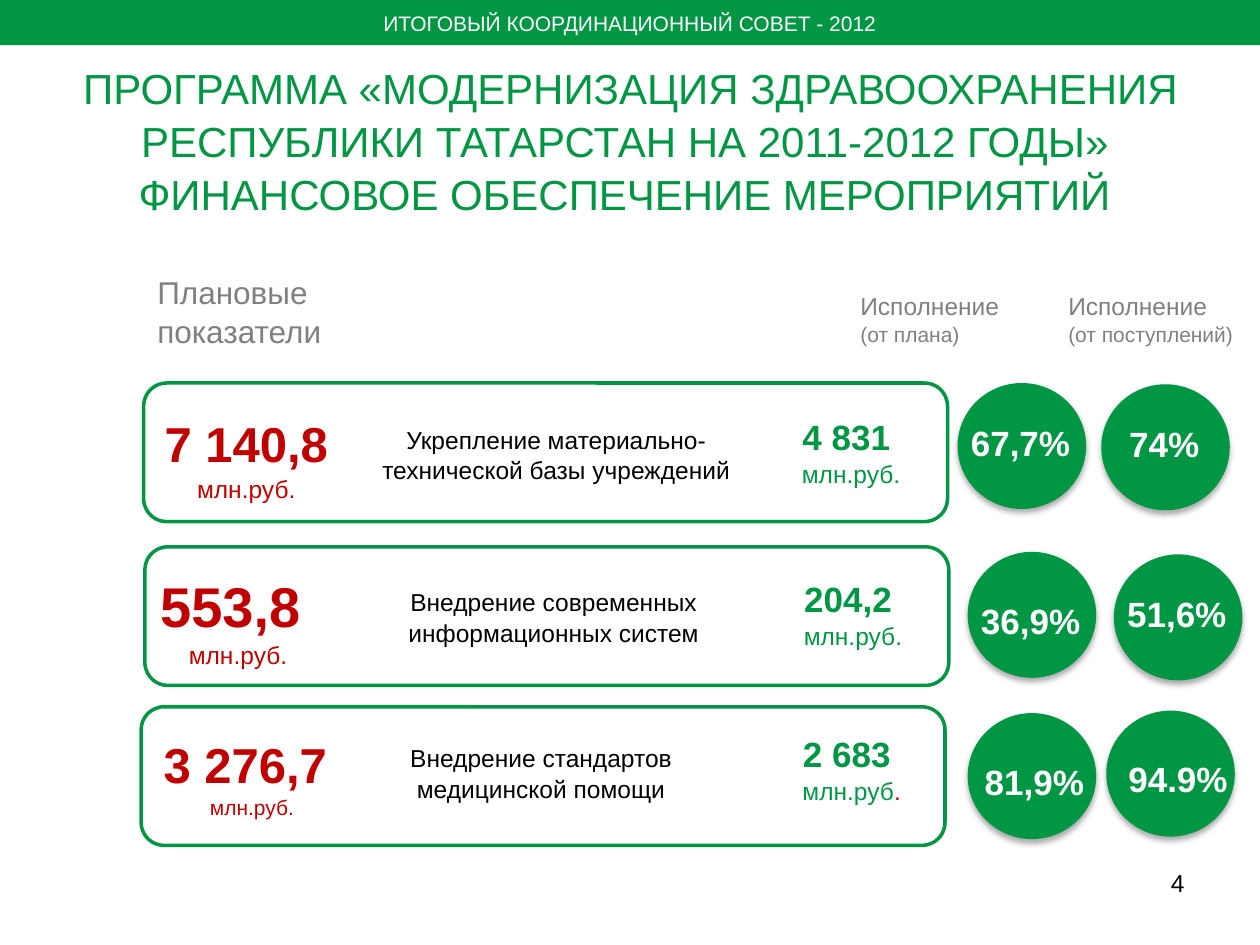
from dataclasses import dataclass

from lxml import etree
from pptx import Presentation
from pptx import util as u
from pptx.dml.color import RGBColor
from pptx.enum import shapes, text
from pptx.oxml.ns import qn

GREEN = RGBColor(0x00, 0x96, 0x44)
RED = RGBColor(0xC0, 0x00, 0x00)
GRAY = RGBColor(0x80, 0x80, 0x80)
BLACK = RGBColor(0x00, 0x00, 0x00)
WHITE = RGBColor(0xFF, 0xFF, 0xFF)

FONT = "Arial"
SLIDE_W, SLIDE_H = u.Inches(10), u.Inches(7.5)
COL, ROW = SLIDE_W / 100, SLIDE_H / 75
LINE_SPACING = 1.05
LEFT, CENTER, RIGHT = text.PP_ALIGN.LEFT, text.PP_ALIGN.CENTER, text.PP_ALIGN.RIGHT


@dataclass(frozen=True)
class Box:
    """Place on the grid of 100 columns and 75 rows."""
    col: float
    row: float
    cols: float
    rows: float

    def emu(self) -> tuple[int, int, int, int]:
        return (round(self.col * COL), round(self.row * ROW),
                round(self.cols * COL), round(self.rows * ROW))


@dataclass(frozen=True)
class Run:
    text: str
    size: float
    color: RGBColor
    bold: bool = False


@dataclass(frozen=True)
class Share:
    """A percentage in a circle; the label has its own place."""
    value: str
    circle: tuple[float, float]
    label: Box


@dataclass(frozen=True)
class Measure:
    frame: tuple[float, float]
    name: str
    name_at: tuple[float, float]
    plan: str
    plan_box: Box
    plan_sizes: tuple[float, float]
    spent: str
    spent_box: Box
    shares: tuple[Share, Share]
    dot_color: RGBColor = GREEN


MEASURES = (
    Measure((11.4, 30.4), "Укрепление материально-технической базы учреждений", (27.5, 33.1),
            "7 140,8 ", Box(11.7, 32.1, 15.7, 8.1), (28, 14),
            "4 831 ", Box(60.1, 32.3, 14.9, 6.7),
            (Share("67,7%", (76, 30.4), Box(76, 32.8, 10, 4.4)),
             Share("74%", (87.4, 30.5), Box(88.6, 32.9, 7.6, 4.4)))),
    Measure((11.5, 43.4), "Внедрение современных информационных систем", (27.3, 46),
            "553,8 ", Box(10.6, 44.6, 16.6, 8.8), (32, 14),
            "204,2 ", Box(60.4, 45.2, 14.6, 6.7),
            (Share("36,9%", (76.8, 43.8), Box(76.8, 46.9, 10, 4.4)),
             Share("51,6%", (88.4, 44), Box(88.4, 46.4, 10, 4.4)))),
    Measure((11.2, 56.1), "Внедрение стандартов медицинской помощи", (26.3, 58.4),
            "3 276,7 ", Box(11.3, 57.6, 17.4, 7.7), (28, 12),
            "2 683 ", Box(60.1, 57.5, 15, 6.7),
            (Share("81,9%", (76.8, 56.6), Box(77.1, 59.7, 10, 4.4)),
             Share("94.9%", (87.8, 56.4), Box(88.5, 59.5, 10, 4.4))),
            dot_color=RED),
)

HEADINGS = (
    (Box(11.5, 21, 16.5, 7.1), ("Плановые", 18), ("показатели", 18)),
    (Box(67.3, 22.5, 16.5, 5.4), ("Исполнение", 14), ("(от плана)", 12)),
    (Box(83.8, 22.5, 16.5, 5.4), ("Исполнение", 14), ("(от поступлений)", 12)),
)


def write(tf, lines: list[list[Run]], align, wrap: bool = True,
          anchor=text.MSO_ANCHOR.TOP, spacing: float = LINE_SPACING) -> None:
    tf.word_wrap = wrap
    tf.auto_size = text.MSO_AUTO_SIZE.NONE
    tf.vertical_anchor = anchor
    for i, runs in enumerate(lines):
        p = tf.paragraphs[0] if i == 0 else tf.add_paragraph()
        p.alignment = align
        p.line_spacing = spacing
        for run in runs:
            r = p.add_run()
            r.text = run.text
            r.font.name = FONT
            r.font.size = u.Pt(run.size)
            r.font.bold = run.bold
            r.font.color.rgb = run.color


def add_text(slide, box: Box, lines: list[list[Run]], align=CENTER, wrap: bool = True) -> None:
    write(slide.shapes.add_textbox(*box.emu()).text_frame, lines, align, wrap)


def add_solid(slide, kind, box: Box):
    sp = slide.shapes.add_shape(kind, *box.emu())
    sp.shadow.inherit = False
    sp.fill.solid()
    sp.fill.fore_color.rgb = GREEN
    sp.line.fill.background()
    return sp


def add_frame(slide, box: Box) -> None:
    sp = slide.shapes.add_shape(shapes.MSO_SHAPE.ROUNDED_RECTANGLE, *box.emu())
    sp.shadow.inherit = False
    sp.fill.background()
    sp.line.color.rgb = GREEN
    sp.line.width = u.Pt(2)


def add_drop_shadow(sp) -> None:
    effects = sp._element.spPr.find(qn("a:effectLst"))
    shadow = etree.SubElement(effects, qn("a:outerShdw"), blurRad=str(u.Pt(3.5)),
                              dist=str(u.Pt(2.2)), dir="5400000", rotWithShape="0")
    color = etree.SubElement(shadow, qn("a:srgbClr"), val=str(BLACK))
    etree.SubElement(color, qn("a:alpha"), val="32000")


def add_share(slide, share: Share) -> None:
    circle = add_solid(slide, shapes.MSO_SHAPE.FLOWCHART_CONNECTOR, Box(*share.circle, 10.2, 10))
    add_drop_shadow(circle)
    add_text(slide, share.label, [[Run(share.value, 20, WHITE, True)]], wrap=False)


def add_measure(slide, m: Measure) -> None:
    big, small = m.plan_sizes
    add_text(slide, m.plan_box, [[Run(m.plan, big, RED, True)], [Run("млн.руб.", small, RED)]])
    add_text(slide, m.spent_box, [[Run(m.spent, 20, GREEN, True)],
                                  [Run("млн.руб", 14, GREEN), Run(".", 14, m.dot_color)]])
    add_frame(slide, Box(*m.frame, 63.8, 11))
    add_text(slide, Box(*m.name_at, 33.3, 5.7), [[Run(m.name, 14, BLACK)]])
    for share in m.shares:
        add_share(slide, share)


def main() -> None:
    prs = Presentation()
    prs.slide_width, prs.slide_height = SLIDE_W, SLIDE_H
    slide = prs.slides.add_slide(prs.slide_layouts[5])

    bar = add_solid(slide, shapes.MSO_SHAPE.RECTANGLE, Box(0, 0, 100, 3.6))
    write(bar.text_frame, [[Run("ИТОГОВЫЙ КООРДИНАЦИОННЫЙ СОВЕТ - 2012", 12, WHITE)]],
          CENTER, wrap=False, anchor=text.MSO_ANCHOR.MIDDLE, spacing=1.0)

    title = slide.shapes.title
    title.left, title.top, title.width, title.height = Box(0.5, 4.3, 99.1, 16.5).emu()
    write(title.text_frame, [
        [Run("ПРОГРАММА «МОДЕРНИЗАЦИЯ ЗДРАВООХРАНЕНИЯ РЕСПУБЛИКИ ТАТАРСТАН НА 2011-2012 ГОДЫ» ",
             24, GREEN)],
        [Run("ФИНАНСОВОЕ ОБЕСПЕЧЕНИЕ МЕРОПРИЯТИЙ ", 24, GREEN)]], CENTER)

    for box, *lines in HEADINGS:
        add_text(slide, box, [[Run(line, size, GRAY)] for line, size in lines], LEFT)
    for measure in MEASURES:
        add_measure(slide, measure)
    add_text(slide, Box(71.7, 68.3, 23.3, 5.2), [[Run("4", 14, BLACK)]], RIGHT)

    prs.save("out.pptx")


if __name__ == "__main__":
    main()
